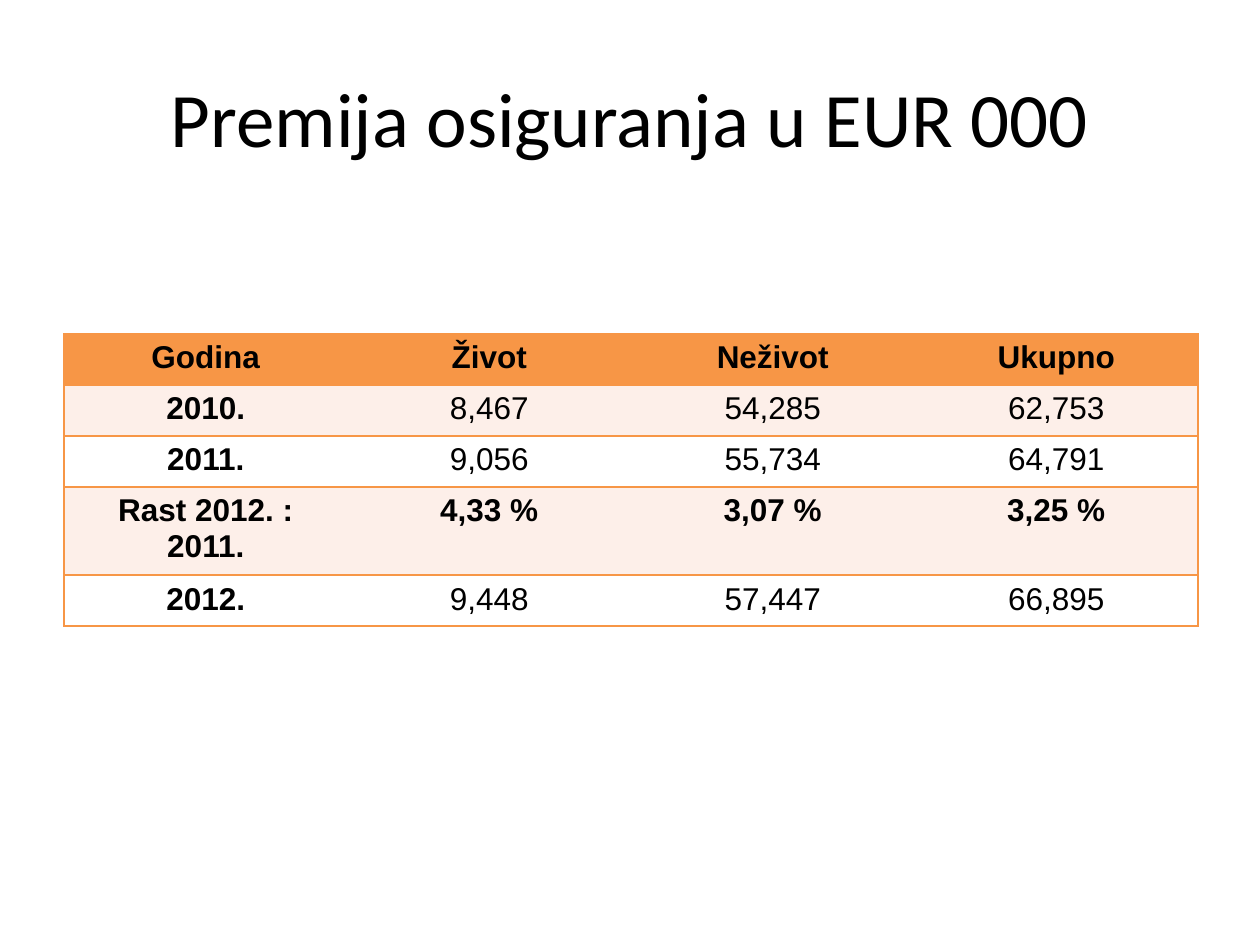
from lxml.etree import SubElement
from pptx import Presentation
from pptx.dml.color import RGBColor
from pptx.enum.text import MSO_ANCHOR, PP_ALIGN
from pptx.oxml.ns import qn
from pptx.util import Emu, Pt

BLACK = RGBColor(0x00, 0x00, 0x00)
WHITE = RGBColor(0xFF, 0xFF, 0xFF)
ORANGE = RGBColor(0xF7, 0x96, 0x46)
PEACH = RGBColor(0xFD, 0xEF, 0xE9)

ROWS = [
    ("Godina", "Život", "Neživot", "Ukupno"),
    ("2010.", "8,467", "54,285", "62,753"),
    ("2011.", "9,056", "55,734", "64,791"),
    ("Rast 2012. : 2011.", "4,33 %", "3,07 %", "3,25 %"),
    ("2012.", "9,448", "57,447", "66,895"),
]
BOLD_ROWS = (0, 3)


def px(count):
    return Emu(round(count * 914400 / 126))


class Deck:
    title_font = {"name": "Calibri", "size": Pt(44), "bold": False}
    cell_font = {"name": "Arial", "size": Pt(18)}

    def __init__(self):
        self.show = Presentation()
        self.show.slide_width, self.show.slide_height = px(1260), px(945)
        self.slide = self.show.slides.add_slide(self.show.slide_layouts[6])

    def label(self, frame, text, style):
        para = frame.paragraphs[0]
        para.alignment = PP_ALIGN.CENTER
        run = para.add_run()
        run.text = text
        for key, value in style.items():
            setattr(run.font, key, value)
        run.font.color.rgb = BLACK

    def title(self, text, left, top, width, height):
        box = self.slide.shapes.add_textbox(*map(px, (left, top, width, height)))
        frame = box.text_frame
        frame.word_wrap = True
        frame.vertical_anchor = MSO_ANCHOR.MIDDLE
        self.label(frame, text, self.title_font)

    def border(self, cell, first, last):
        props = cell._tc.get_or_add_tcPr()
        sides = {"lnL": first, "lnR": last, "lnT": True, "lnB": True}
        for side, drawn in sides.items():
            line = SubElement(props, qn(f"a:{side}"), w=str(Pt(1)))
            if drawn:
                fill = SubElement(line, qn("a:solidFill"))
                SubElement(fill, qn("a:srgbClr"), val=str(ORANGE))
            else:
                SubElement(line, qn("a:noFill"))

    def table(self, rows, left, top, width, step):
        count = len(rows[0])
        area = map(px, (left, top, width, step * len(rows)))
        grid = self.slide.shapes.add_table(len(rows), count, *area).table
        grid.first_row = grid.horz_banding = False
        for r, row in enumerate(rows):
            shade = ORANGE if r == 0 else PEACH if r % 2 else WHITE
            for c, text in enumerate(row):
                cell = grid.cell(r, c)
                self.border(cell, c == 0, c == count - 1)
                cell.fill.solid()
                cell.fill.fore_color.rgb = shade
                bold = c == 0 or r in BOLD_ROWS
                self.label(cell.text_frame, text, {**self.cell_font, "bold": bold})


def main():
    deck = Deck()
    deck.title("Premija osiguranja u EUR 000", 63, 38, 1134, 158)
    deck.table(ROWS, 64, 334, 1134, 51)
    deck.show.save("out.pptx")


if __name__ == "__main__":
    main()
